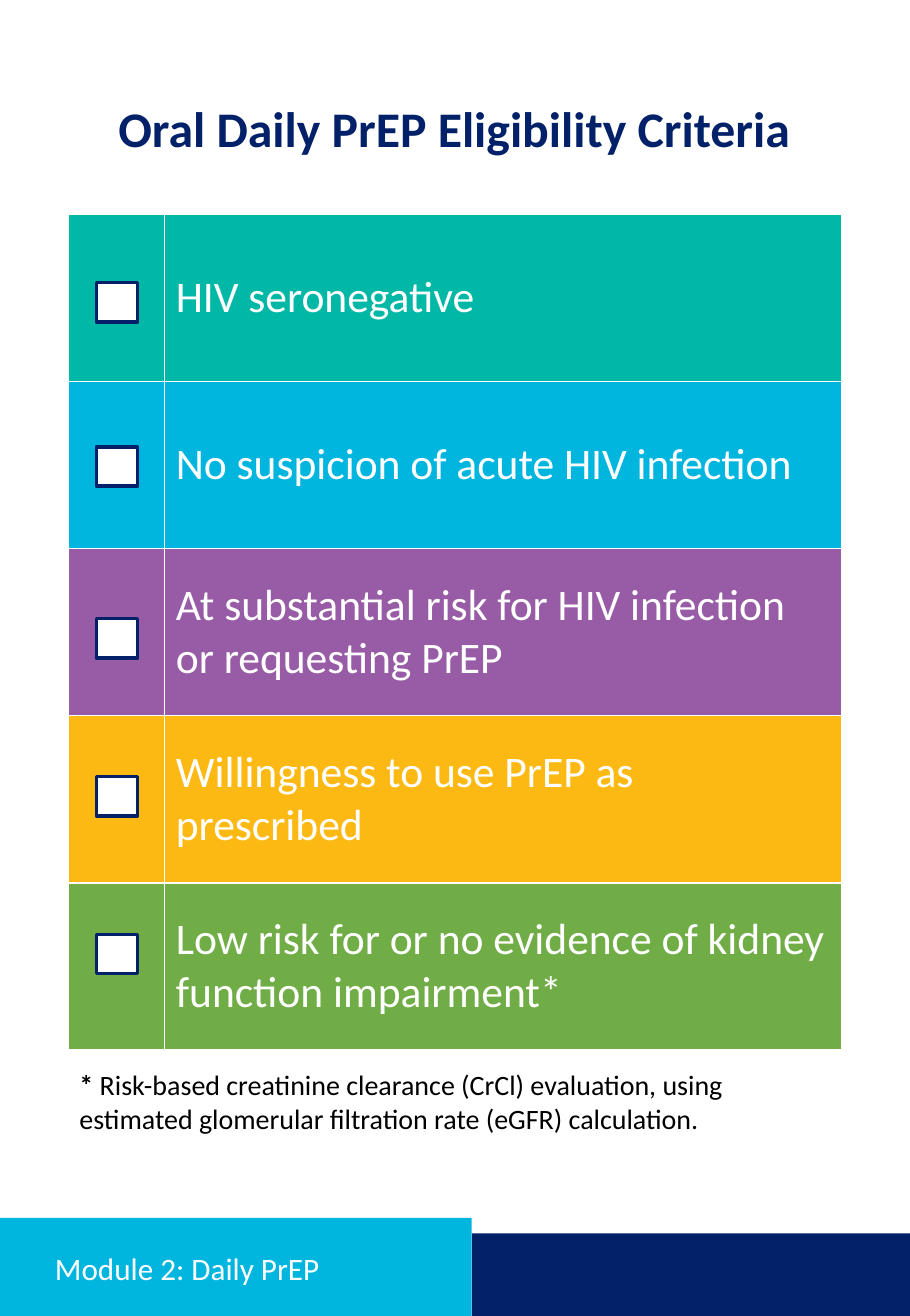
from dataclasses import dataclass

from pptx import Presentation
from pptx.dml.color import RGBColor
from pptx.enum.shapes import MSO_SHAPE as Shape
from pptx.enum.text import MSO_ANCHOR as Anchor, PP_ALIGN as Align
from pptx.oxml import parse_xml
from pptx.oxml.ns import nsdecls
from pptx.util import Pt


@dataclass(frozen=True)
class Theme:
    font: str = "Calibri"
    navy: str = "022169"
    cyan: str = "00B5DE"
    teal: str = "00B8A5"
    purple: str = "975CA5"
    amber: str = "FDB913"
    green: str = "70AD47"
    white: str = "FFFFFF"
    black: str = "000000"
    title_size: int = 32
    criterion_size: int = 28
    footer_size: int = 20
    note_size: int = 18


THEME = Theme()

CRITERIA = [
    ("HIV seronegative", THEME.teal),
    ("No suspicion of acute HIV infection", THEME.cyan),
    ("At substantial risk for HIV infection or requesting PrEP", THEME.purple),
    ("Willingness to use PrEP as prescribed", THEME.amber),
    ("Low risk for or no evidence of kidney function impairment*", THEME.green),
]
CHECKBOX_TOPS = [181.7, 287.3, 397.7, 499.3, 600.8]
PAGE_WIDTH, PAGE_HEIGHT = 585, 846
LEFT, WIDTH = 44, 496.8
TICK_WIDTH = 61.9
ROW_HEIGHT = 107.5
FOOTER_SPLIT = 303.3


def apply(target, formats):
    for name, value in formats.items():
        setattr(target, name, value)


def add_span(para, text, size, color, bold=False):
    span = para.add_run()
    span.text = text
    apply(span.font, {"name": THEME.font, "size": Pt(size), "bold": bold})
    span.font.color.rgb = RGBColor.from_string(color)


def add_text(page, bounds, spans, size, color, frame_format=None, para_format=None):
    box = page.shapes.add_textbox(*map(Pt, bounds))
    frame = box.text_frame
    apply(frame, {"word_wrap": True, **(frame_format or {})})
    para = frame.paragraphs[0]
    apply(para, para_format or {})
    for text, bold in spans:
        add_span(para, text, size, color, bold)


def add_rect(page, bounds, fill, outline=None):
    rect = page.shapes.add_shape(Shape.RECTANGLE, *map(Pt, bounds))
    rect.shadow.inherit = False
    rect.fill.solid()
    rect.fill.fore_color.rgb = RGBColor.from_string(fill)
    if outline:
        rect.line.color.rgb = RGBColor.from_string(outline)
        rect.line.width = Pt(2.25)
    else:
        rect.line.fill.background()


def style_cell(cell, fill):
    properties = cell._tc.get_or_add_tcPr()
    for side in ("lnL", "lnR", "lnT", "lnB"):
        properties.append(parse_xml(
            f'<a:{side} {nsdecls("a")} w="{Pt(1)}"><a:solidFill>'
            f'<a:srgbClr val="{THEME.white}"/></a:solidFill></a:{side}>'))
    cell.fill.solid()
    cell.fill.fore_color.rgb = RGBColor.from_string(fill)
    cell.vertical_anchor = Anchor.MIDDLE


def add_criteria(page):
    bounds = (LEFT, 137.6, WIDTH, ROW_HEIGHT * len(CRITERIA))
    table = page.shapes.add_table(len(CRITERIA), 2, *map(Pt, bounds)).table
    apply(table, {"first_row": False, "horz_banding": False})
    table.columns[0].width = Pt(TICK_WIDTH)
    table.columns[1].width = Pt(WIDTH - TICK_WIDTH)
    for row, (text, fill) in zip(table.rows, CRITERIA):
        row.height = Pt(ROW_HEIGHT)
        for cell in row.cells:
            style_cell(cell, fill)
        para = row.cells[1].text_frame.paragraphs[0]
        add_span(para, text, THEME.criterion_size, THEME.white)
    for top in CHECKBOX_TOPS:
        add_rect(page, (61.9, top, 26.6, 25.2), THEME.white, THEME.navy)


def main():
    deck = Presentation()
    apply(deck, {"slide_width": Pt(PAGE_WIDTH), "slide_height": Pt(PAGE_HEIGHT)})
    page = deck.slides.add_slide(deck.slide_layouts[6])

    add_rect(page, (FOOTER_SPLIT, 793, PAGE_WIDTH - FOOTER_SPLIT, 53), THEME.navy)
    add_rect(page, (0, 782.9, FOOTER_SPLIT, 63.1), THEME.cyan)
    add_text(page, (LEFT, 63.4, WIDTH, 58.3),
             [("Oral Daily PrEP Eligibility Criteria", True)],
             THEME.title_size, THEME.navy,
             para_format={"alignment": Align.CENTER, "line_spacing": 0.9})
    add_criteria(page)
    add_text(page, (LEFT, 683, WIDTH, 51.1),
             [("* ", True),
              ("Risk-based creatinine clearance (CrCl) evaluation, using "
               "estimated glomerular filtration rate (eGFR) calculation.", False)],
             THEME.note_size, THEME.black)
    add_text(page, (28.2, 800.6, 253.4, 32.4), [("Module 2: Daily PrEP", False)],
             THEME.footer_size, THEME.white,
             frame_format={"vertical_anchor": Anchor.MIDDLE},
             para_format={"line_spacing": 0.9})
    deck.save("out.pptx")


if __name__ == "__main__":
    main()
